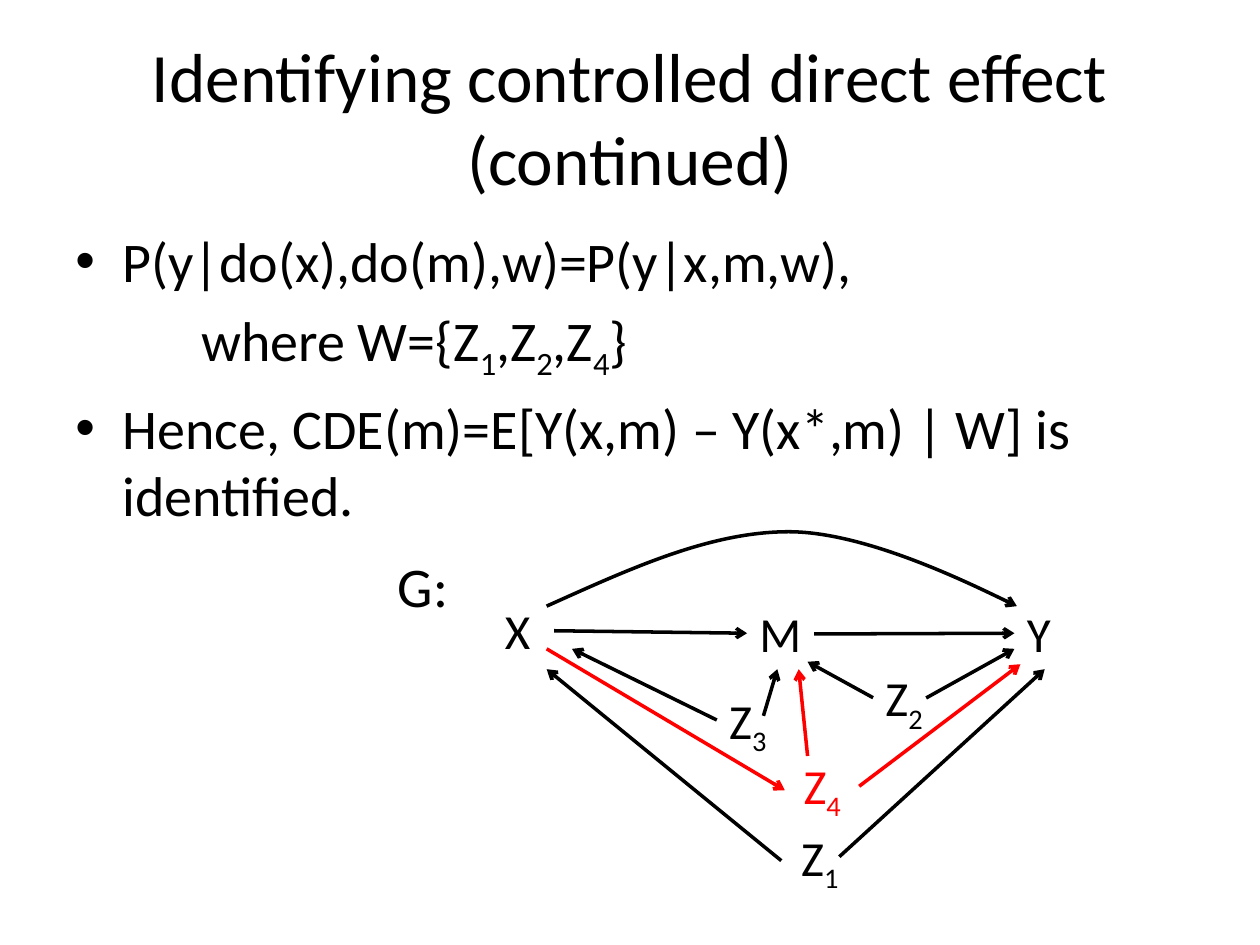
from pptx import Presentation
from pptx.dml.color import RGBColor
from pptx.enum.shapes import MSO_CONNECTOR
from pptx.enum.text import MSO_ANCHOR, PP_ALIGN
from pptx.oxml.ns import qn
from pptx.util import Cm, Pt
from lxml import etree

LINE = MSO_CONNECTOR.STRAIGHT
MID, TOP = MSO_ANCHOR.MIDDLE, MSO_ANCHOR.TOP
CENTER, LEFT = PP_ALIGN.CENTER, PP_ALIGN.LEFT
RIGHT_SIDE, LEFT_SIDE = 3, 1
FONT = "Calibri"
HEX = {"ink": "000000", "red": "FF0000", "page": "FFFFFF"}

TITLE = "Identifying controlled direct effect (continued)"
BODY = [
    (True, ["P(y|do(x),do(m),w)=P(y|x,m,w),"]),
    (False, ["where W={Z", "1", ",Z", "2", ",Z", "4", "}"]),
    (True, ["Hence, CDE(m)=E[Y(x,m) – Y(x*,m) | W] is identified."]),
]
NODES = {
    "X": (9.93, 11.99, "ink"),
    "M": (15.06, 12.04, "ink"),
    "Y": (20.45, 12.04, "ink"),
    "Z4": (15.95, 15.11, "red"),
    "Z2": (17.6, 13.34, "ink"),
    "Z3": (14.45, 13.79, "ink"),
    "Z1": (15.9, 16.56, "ink"),
}
ARROWS = [
    (("X", RIGHT_SIDE), ("M", LEFT_SIDE), "ink"),
    ((16.41, 12.78), ("Y", LEFT_SIDE), "ink"),
    ((18.67, 14.07), (20.45, 13.08), "ink"),
    ((11.02, 13.08), (15.82, 15.93), "red"),
    ((17.32, 15.85), (20.57, 13.39), "red"),
    (("Z2", LEFT_SIDE), (16.28, 13.34), "ink"),
    (("Z3", LEFT_SIDE), (11.53, 13.08), "ink"),
    ((15.39, 14.43), (15.67, 13.49), "ink"),
    ((16.28, 15.24), (16.1, 13.49), "red"),
    ((16.92, 17.27), (21.06, 13.49), "ink"),
    ((15.75, 17.35), (11.02, 13.49), "ink"),
]
ARC = [(11.02, 12.22), (12.67, 11.48), (14.3, 10.72), (15.9, 10.72),
       (17.48, 10.72), (20.5, 12.22), (20.5, 12.22)]


def color(name):
    return RGBColor.from_string(HEX[name])


def add_box(slide, at, wrap=True, anchor=TOP):
    box = slide.shapes.add_textbox(*map(Cm, at))
    box.text_frame.word_wrap = wrap
    box.text_frame.vertical_anchor = anchor
    return box


def add_runs(par, texts, size, ink="ink", align=LEFT):
    par.alignment = align
    for text in texts:
        run = par.add_run()
        run.text = text
        run.font.name = FONT
        run.font.size = Pt(size)
        run.font.color.rgb = color(ink)
        if text.isdigit():
            run.font._element.set("baseline", "-25000")


def set_indent(par, bullet):
    props = par._p.get_or_add_pPr()
    left, first = (0.95, -0.95) if bullet else (2.54, 0)
    props.set("marL", str(Cm(left)))
    props.set("indent", str(Cm(first)))
    if bullet:
        etree.SubElement(props, qn("a:buFont"), typeface="Arial")
        etree.SubElement(props, qn("a:buChar"), char="•")
    else:
        etree.SubElement(props, qn("a:buNone"))


def style_line(shape, ink):
    shape.line.color.rgb = color(ink)
    shape.line.width = Pt(2)
    etree.SubElement(shape.line._get_or_add_ln(), qn("a:tailEnd"), type="arrow")


def add_arrow(slide, boxes, start, end, ink):
    ends = [(0, 0) if p[0] in boxes else p for p in (start, end)]
    line = slide.shapes.add_connector(LINE, *(Cm(v) for p in ends for v in p))
    if start[0] in boxes:
        line.begin_connect(boxes[start[0]], start[1])
    if end[0] in boxes:
        line.end_connect(boxes[end[0]], end[1])
    style_line(line, ink)
    etree.SubElement(line._element.spPr, qn("a:effectLst"))


def add_arc(slide, points):
    pts = [(Cm(x), Cm(y)) for x, y in points]
    form = slide.shapes.build_freeform(*pts[0])
    form.add_line_segments(pts[1:], close=False)
    arc = form.convert_to_shape()
    arc.shadow.inherit = False
    arc.fill.background()
    style_line(arc, "ink")
    track = arc._element.find(".//" + qn("a:path"))
    steps = track.findall(qn("a:lnTo"))
    for i in range(0, len(steps), 3):
        curve = etree.SubElement(track, qn("a:cubicBezTo"))
        for step in steps[i:i + 3]:
            curve.append(step[0])
            track.remove(step)


def main():
    deck = Presentation()
    deck.slide_width, deck.slide_height = Cm(25.4), Cm(19.05)
    slide = deck.slides.add_slide(deck.slide_layouts[6])
    slide.background.fill.solid()
    slide.background.fill.fore_color.rgb = color("page")

    title = add_box(slide, (1.27, 0.76, 22.86, 3.18), anchor=MID)
    add_runs(title.text_frame.paragraphs[0], [TITLE], 39.6, align=CENTER)

    frame = add_box(slide, (1.27, 4.45, 22.86, 12.57)).text_frame
    for i, (bullet, texts) in enumerate(BODY):
        par = frame.add_paragraph() if i else frame.paragraphs[0]
        par.space_before = Pt(6.4)
        set_indent(par, bullet)
        add_runs(par, texts, 32)

    label = add_box(slide, (7.77, 11, 1.55, 1.63), wrap=False)
    add_runs(label.text_frame.paragraphs[0], ["G:"], 32)

    boxes = {}
    for name, (x, y, ink) in NODES.items():
        wide = 1.24 if len(name) == 1 else 1.35
        boxes[name] = add_box(slide, (x, y, wide, 1.45))
        add_runs(boxes[name].text_frame.paragraphs[0], list(name), 28, ink)

    for start, end, ink in ARROWS:
        add_arrow(slide, boxes, start, end, ink)
    add_arc(slide, ARC)
    deck.save("out.pptx")


if __name__ == "__main__":
    main()
